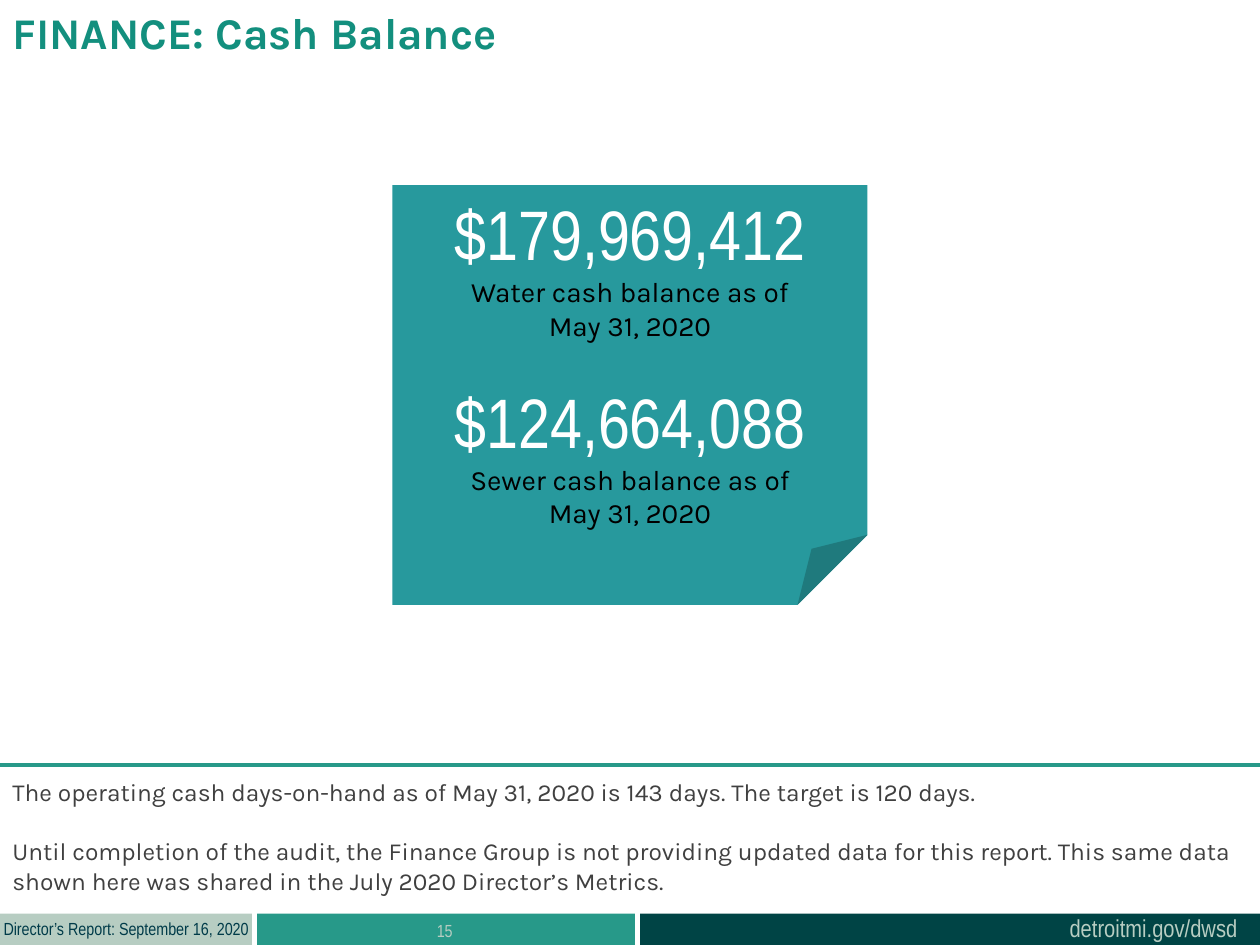
from lxml.etree import SubElement
from pptx import Presentation
from pptx.dml.color import RGBColor
from pptx.enum.shapes import MSO_CONNECTOR, MSO_SHAPE
from pptx.enum.text import MSO_ANCHOR, PP_ALIGN
from pptx.oxml.ns import qn
from pptx.util import Inches, Pt

# Content
TITLE = "FINANCE: Cash Balance"
BALANCES = [
    ("$179,969,412", "Water cash balance as of\nMay 31, 2020"),
    ("$124,664,088", "Sewer cash balance as of\nMay 31, 2020"),
]
REMARKS = [
    "The operating cash days-on-hand as of May 31, 2020 is 143 days. "
    "The target is 120 days.",
    "Until completion of the audit, the Finance Group is not providing updated "
    "data for this report. This same data shown here was shared in the "
    "July 2020 Director’s Metrics.",
]
REPORT_DATE = "Director’s Report: September 16, 2020"
PAGE_NUMBER = "15"
SITE = "detroitmi.gov/dwsd"

COLORS = {
    "teal": "279989", "deep": "004445", "sage": "B7CDC2", "navy": "003B49",
    "title": "138F7E", "card": "27999D", "white": "FFFFFF",
    "black": "000000", "grey": "404040",
}
NARROW, KARLA = "Arial Narrow", "Karla"

# Layout, in inches
WIDTH, HEIGHT = 10, 7.5
FOOTER_HEIGHT = 0.25
FOOTER_TOP = HEIGHT - FOOTER_HEIGHT
FOOTER_BANDS = [(0, 2, "sage"), (2.04, 3, "teal"), (5.08, 5, "deep")]
RULE_TOP = 6.07
CARD_WIDTH, CARD_HEIGHT, CARD_TOP = 3.77, 3.33, 1.47

presentation = Presentation()
presentation.slide_width, presentation.slide_height = Inches(WIDTH), Inches(HEIGHT)
slide = presentation.slides.add_slide(presentation.slide_layouts[6])


def color(name):
    return RGBColor.from_string(COLORS[name])


def add_block(kind, left, top, width, height, fill):
    block = slide.shapes.add_shape(kind, *map(Inches, (left, top, width, height)))
    block.shadow.inherit = False
    block.fill.solid()
    block.fill.fore_color.rgb = color(fill)
    block.line.fill.background()
    return block


def write(frame, lines, align=PP_ALIGN.LEFT):
    """Each line is (text, font name, size, colour, space before)."""
    for index, (text, font, size, ink, gap) in enumerate(lines):
        paragraph = frame.add_paragraph() if index else frame.paragraphs[0]
        paragraph.text = text
        paragraph.alignment = align
        paragraph.space_before = Pt(gap)
        for run in paragraph.runs:
            run.font.name, run.font.size = font, Pt(size)
            run.font.color.rgb = color(ink)


def add_text(left, top, width, height, lines, align=PP_ALIGN.LEFT, wrap=True):
    box = slide.shapes.add_textbox(*map(Inches, (left, top, width, height)))
    box.text_frame.word_wrap = wrap
    write(box.text_frame, lines, align)
    return box.text_frame


# Footer bands and their labels
for left, width, fill in FOOTER_BANDS:
    add_block(MSO_SHAPE.RECTANGLE, left, FOOTER_TOP, width, FOOTER_HEIGHT, fill)
add_text(8.39, 7.2, 1.55, 0.34, [(SITE, NARROW, 14, "sage", 0)], wrap=False)
add_text(-0.07, 7.24, 2.16, 0.27, [(REPORT_DATE, NARROW, 10, "navy", 0)], wrap=False)
add_text(2.03, FOOTER_TOP, 3, 0.4, [(PAGE_NUMBER, NARROW, 10, "sage", 0)],
         PP_ALIGN.CENTER)

# Title
title = add_text(0, 0, 7.59, 0.77, [(TITLE, KARLA, 25, "title", 0)])
title.paragraphs[0].runs[0].font.bold = True

# Rule above the remarks
rule = slide.shapes.add_connector(
    MSO_CONNECTOR.STRAIGHT, *map(Inches, (WIDTH, RULE_TOP, 0, RULE_TOP)))
rule.line.color.rgb = color("teal")
rule.line.width = Pt(2.25)
SubElement(rule._element.spPr, qn("a:effectLst"))

# Card with the two balances
card = add_block(MSO_SHAPE.FOLDED_CORNER, (WIDTH - CARD_WIDTH) / 2, CARD_TOP,
                 CARD_WIDTH, CARD_HEIGHT, "card")
card.text_frame.word_wrap = True
card.text_frame.vertical_anchor = MSO_ANCHOR.MIDDLE
balance_lines = []
for index, (amount, label) in enumerate(BALANCES):
    balance_lines += [(amount, NARROW, 40, "white", 21 if index else 0),
                      (label, KARLA, 16, "black", 0)]
write(card.text_frame, balance_lines, PP_ALIGN.CENTER)

# Remarks
add_text(0, 6.12, WIDTH, 1.04,
         [(remark, KARLA, 14, "grey", 17 if index else 0)
          for index, remark in enumerate(REMARKS)])

presentation.save("out.pptx")
